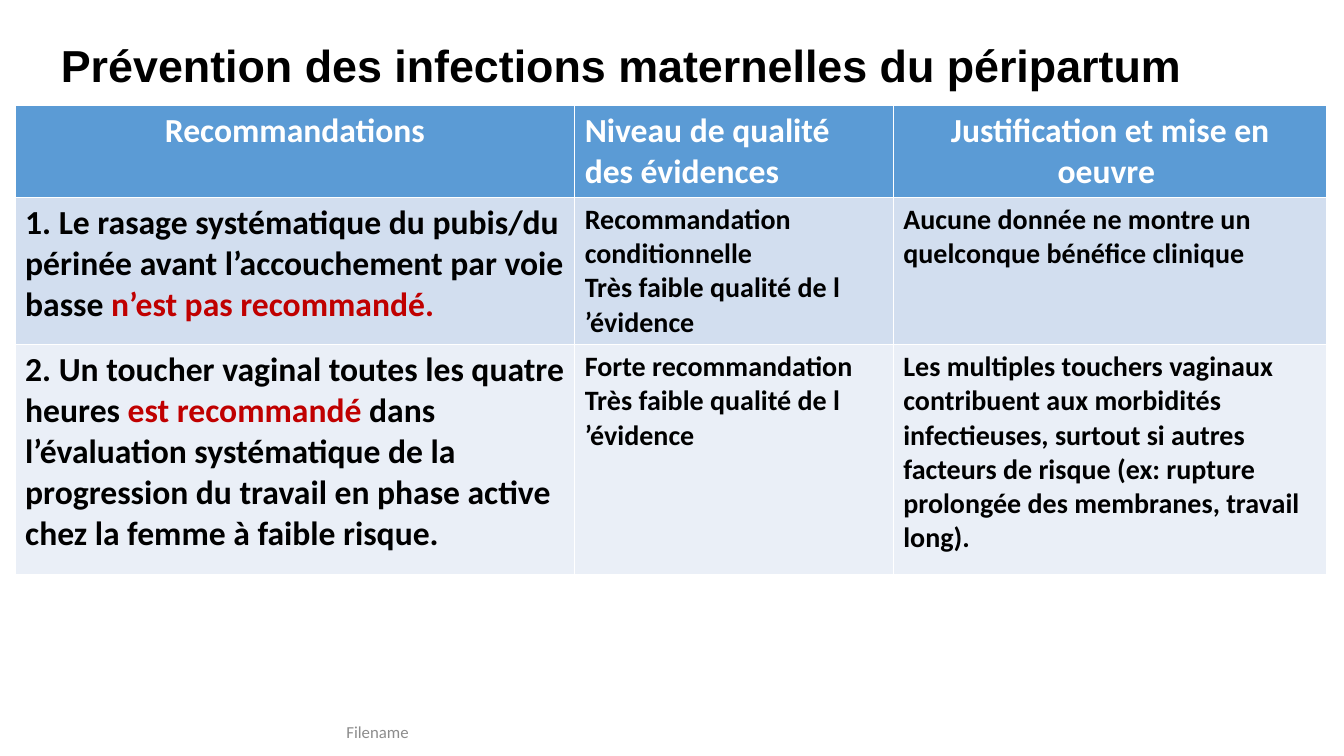
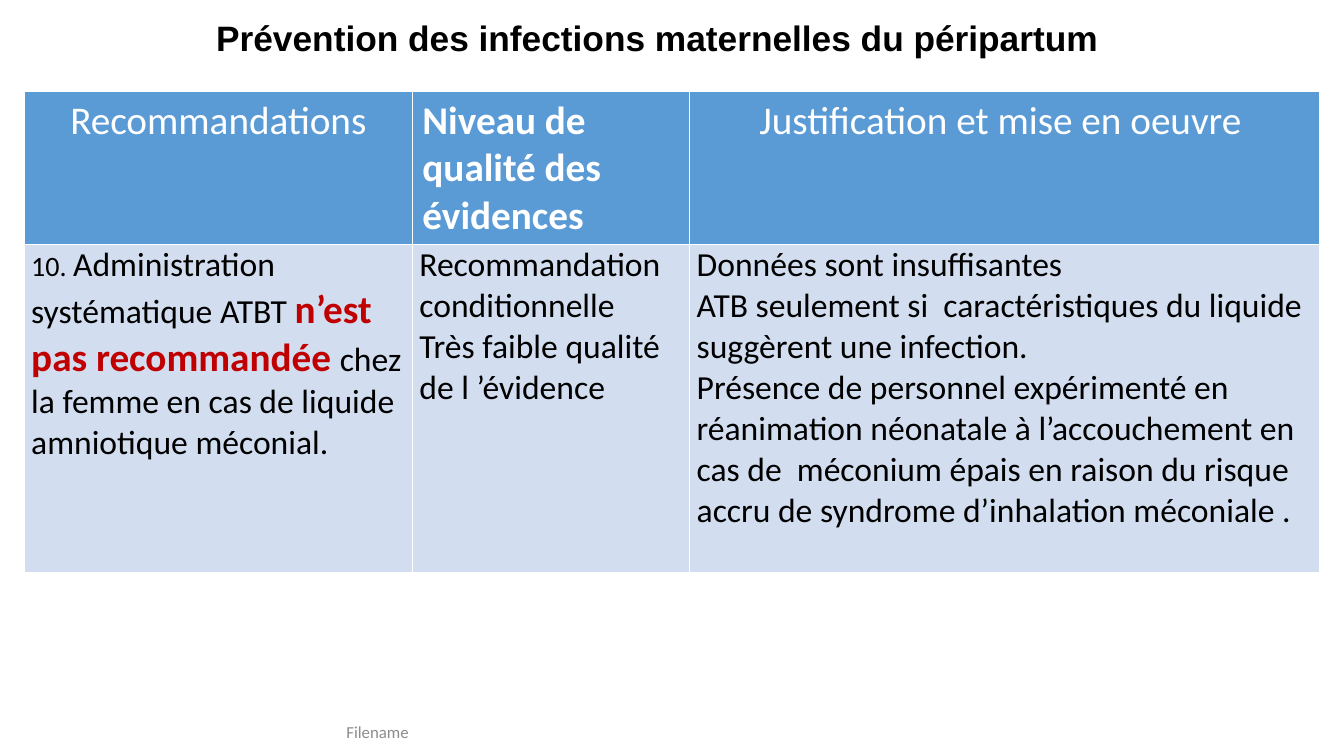
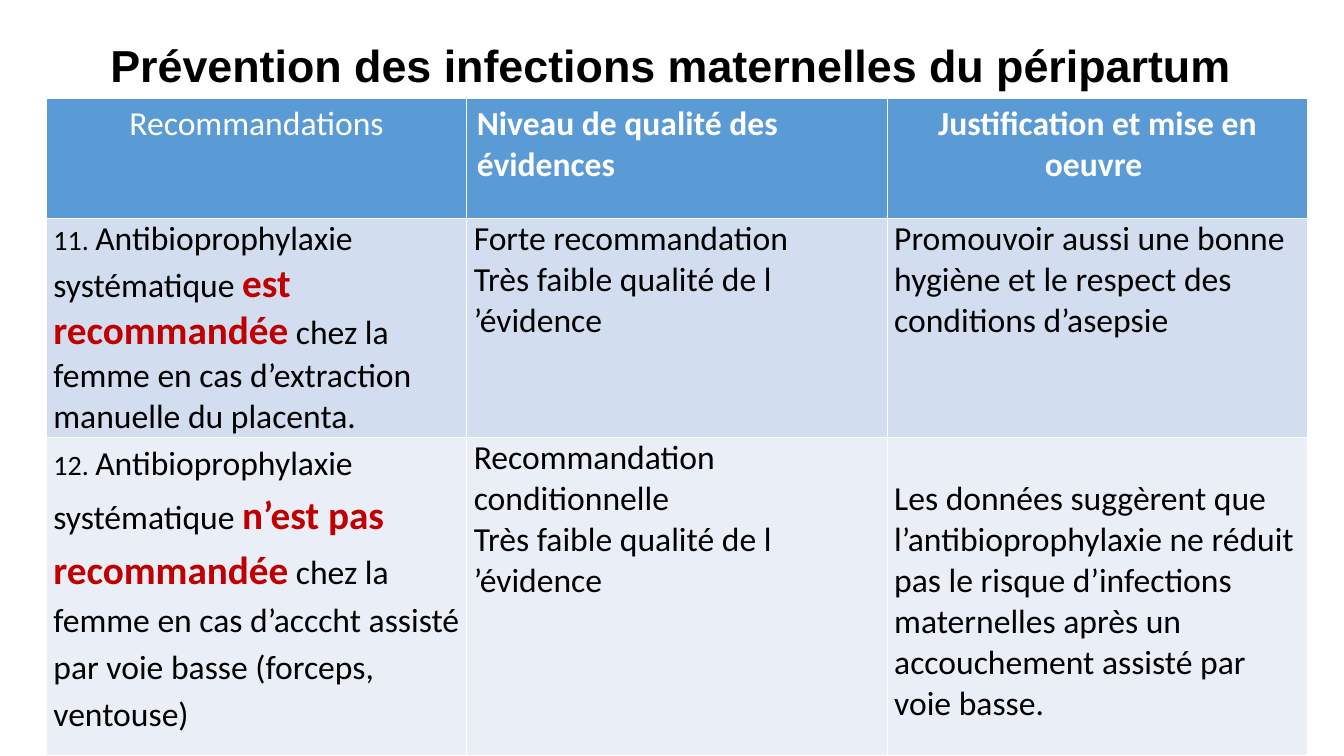
from pptx import Presentation
from pptx.dml.color import RGBColor
from pptx.enum.text import MSO_ANCHOR, PP_ALIGN
from pptx.oxml import parse_xml
from pptx.oxml.ns import nsdecls
from pptx.util import Inches, Pt

CENTER, LEFT = PP_ALIGN.CENTER, PP_ALIGN.LEFT
MIDDLE = MSO_ANCHOR.MIDDLE

BLACK = RGBColor(0x00, 0x00, 0x00)
WHITE = RGBColor(0xFF, 0xFF, 0xFF)
GRAY = RGBColor(0x8C, 0x8C, 0x8C)
RED = RGBColor(0xC0, 0x00, 0x00)
BLUE = RGBColor(0x5B, 0x9B, 0xD5)
BANDS = [RGBColor(0xD2, 0xDE, 0xEF), RGBColor(0xEA, 0xEF, 0xF7)]

TITLE = "Prévention des infections maternelles du péripartum "
HEADERS = ["Recommandations", "Niveau de qualité des évidences",
           "Justification et mise en oeuvre "]
HEADER_ALIGNS = [CENTER, LEFT, CENTER]
CONDITIONAL = "Recommandation conditionnelle"
STRONG = "Forte recommandation"
VERY_LOW = "Très faible qualité de l ’évidence"
BODY_INSETS = {"margin_left": Inches(0.07), "margin_right": Inches(0.07),
               "margin_top": 0, "margin_bottom": 0}


def set_attrs(obj, values):
    for name, value in values.items():
        setattr(obj, name, value)


def add_run(p, text, size, color=BLACK, bold=False, name="Calibri"):
    r = p.add_run()
    r.text = text
    set_attrs(r.font, {"size": Pt(size), "bold": bold, "name": name})
    r.font.color.rgb = color


def add_label(s, box, text, spacing=1.0, **font):
    """Add one centred line of text in a box."""
    tf = s.shapes.add_textbox(*map(Inches, box)).text_frame
    set_attrs(tf, {"word_wrap": True, "vertical_anchor": MIDDLE})
    p = tf.paragraphs[0]
    set_attrs(p, {"alignment": CENTER, "line_spacing": spacing})
    add_run(p, text, **font)


def add_title(s, box, size):
    add_label(s, box, TITLE, spacing=0.9, size=size, bold=True, name="Arial")


def add_footer(s):
    add_label(s, (2.16, 7.18, 3.17, 0.16), "Filename", size=12, color=GRAY)


def style_cell(cell, color):
    """Give the cell thin white borders and a fill."""
    tc_pr = cell._tc.get_or_add_tcPr()
    for side in "LRTB":
        tc_pr.append(parse_xml(
            f'<a:ln{side} {nsdecls("a")} w="12700"><a:solidFill>'
            f'<a:srgbClr val="{WHITE}"/></a:solidFill></a:ln{side}>'))
    cell.fill.solid()
    cell.fill.fore_color.rgb = color


def write_cell(cell, paragraphs, font, align=LEFT):
    """Write paragraphs, each a list of (text, font changes) runs."""
    tf = cell.text_frame
    for i, runs in enumerate(paragraphs):
        p = tf.add_paragraph() if i else tf.paragraphs[0]
        p.alignment = align
        for text, changes in runs:
            add_run(p, text, **{**font, **changes})


def plain(*texts):
    return [[(text, {})] for text in texts]


def recommendation(before, verdict, after="", number="", verdict_size=24):
    runs = [(number, {"size": 20}), (before, {"size": 24}),
            (verdict, {"size": verdict_size, "color": RED, "bold": True}),
            (after, {"size": 24})]
    return [[run for run in runs if run[0]]]


def add_table(s, left, top, widths, heights, header_size, header_bolds,
              rows, body_font, insets):
    table = s.shapes.add_table(len(heights), len(widths), Inches(left), Inches(top),
                               Inches(sum(widths)), Inches(sum(heights))).table
    for col, width in zip(table.columns, widths):
        col.width = Inches(width)
    for row, height in zip(table.rows, heights):
        row.height = Inches(height)
    for i, (header, bold) in enumerate(zip(HEADERS, header_bolds)):
        cell = table.cell(0, i)
        style_cell(cell, BLUE)
        font = {"size": header_size, "color": WHITE, "bold": bold}
        write_cell(cell, plain(header), font, HEADER_ALIGNS[i])
    for j, row in enumerate(rows):
        for i, paragraphs in enumerate(row):
            cell = table.cell(j + 1, i)
            style_cell(cell, BANDS[j % 2])
            set_attrs(cell, insets)
            write_cell(cell, paragraphs, body_font)
    return table


def shaving_and_examination(s):
    add_title(s, (0.26, 0.21, 11.94, 0.93), 32)
    add_footer(s)
    rows = [
        [recommendation("1. Le rasage systématique du pubis/du périnée avant "
                        "l’accouchement par voie basse ", "n’est pas recommandé."),
         plain(CONDITIONAL, VERY_LOW),
         plain("Aucune donnée ne montre un quelconque bénéfice clinique")],
        [recommendation("2. Un toucher vaginal toutes les quatre heures ",
                        "est recommandé ",
                        "dans l’évaluation systématique de la progression du travail "
                        "en phase active chez la femme à faible risque."),
         plain(STRONG, VERY_LOW),
         plain("Les multiples touchers vaginaux contribuent aux morbidités "
               "infectieuses, surtout si autres facteurs de risque (ex: rupture "
               "prolongée des membranes, travail long).")],
    ]
    add_table(s, 0.15, 1.05, [5.55, 3.16, 4.3], [0.91, 1.46, 2.28], 24,
              [True, True, True], rows, {"size": 20, "bold": True}, {})


def meconium(s):
    add_footer(s)
    rows = [
        [recommendation("Administration systématique ATBT ", "n’est pas recommandée ",
                        "chez la femme en cas de liquide amniotique méconial.",
                        "10. ", 28),
         plain(CONDITIONAL, VERY_LOW),
         plain("Données sont insuffisantes",
               "ATB seulement si  caractéristiques du liquide suggèrent une infection.",
               "Présence de personnel expérimenté en réanimation néonatale à "
               "l’accouchement en cas de  méconium épais en raison du risque accru "
               "de syndrome d’inhalation méconiale .")],
    ]
    add_table(s, 0.24, 0.91, [3.85, 2.75, 6.25], [1.52, 3.25], 28,
              [False, True, False], rows, {"size": 24}, BODY_INSETS)
    add_title(s, (2.02, 0.03, 9, 0.73), 25.2)


def antibiotic_prophylaxis(s):
    rows = [
        [recommendation("Antibioprophylaxie systématique ", "est recommandée",
                        " chez la femme en cas d’extraction manuelle du placenta.",
                        "11. ", 28),
         plain(STRONG, VERY_LOW),
         plain("Promouvoir aussi une bonne hygiène et le respect des conditions "
               "d’asepsie")],
        [recommendation("Antibioprophylaxie systématique ", "n’est pas recommandée",
                        " chez la femme en cas d’acccht assisté par voie basse "
                        "(forceps, ventouse)", "12. ", 28),
         plain(CONDITIONAL, VERY_LOW),
         plain("Les données suggèrent que l’antibioprophylaxie ne réduit pas le "
               "risque d’infections maternelles après un accouchement assisté par "
               "voie basse.")],
    ]
    table = add_table(s, 0.46, 0.98, [4.17] * 3, [1.19, 2.17, 3.16], 24,
                      [False, True, True], rows, {"size": 24}, BODY_INSETS)
    set_attrs(table.cell(2, 0).text_frame.paragraphs[0],
              {"line_spacing": 1.15, "space_before": Pt(6), "space_after": Pt(6)})
    table.cell(2, 2).margin_top = Inches(0.41)
    add_title(s, (0.82, 0.21, 11.8, 0.93), 32)


def main():
    prs = Presentation()
    prs.slide_width, prs.slide_height = Inches(13.33), Inches(7.5)
    for build in (shaving_and_examination, meconium, antibiotic_prophylaxis):
        build(prs.slides.add_slide(prs.slide_layouts[6]))
    prs.save("out.pptx")


if __name__ == "__main__":
    main()
